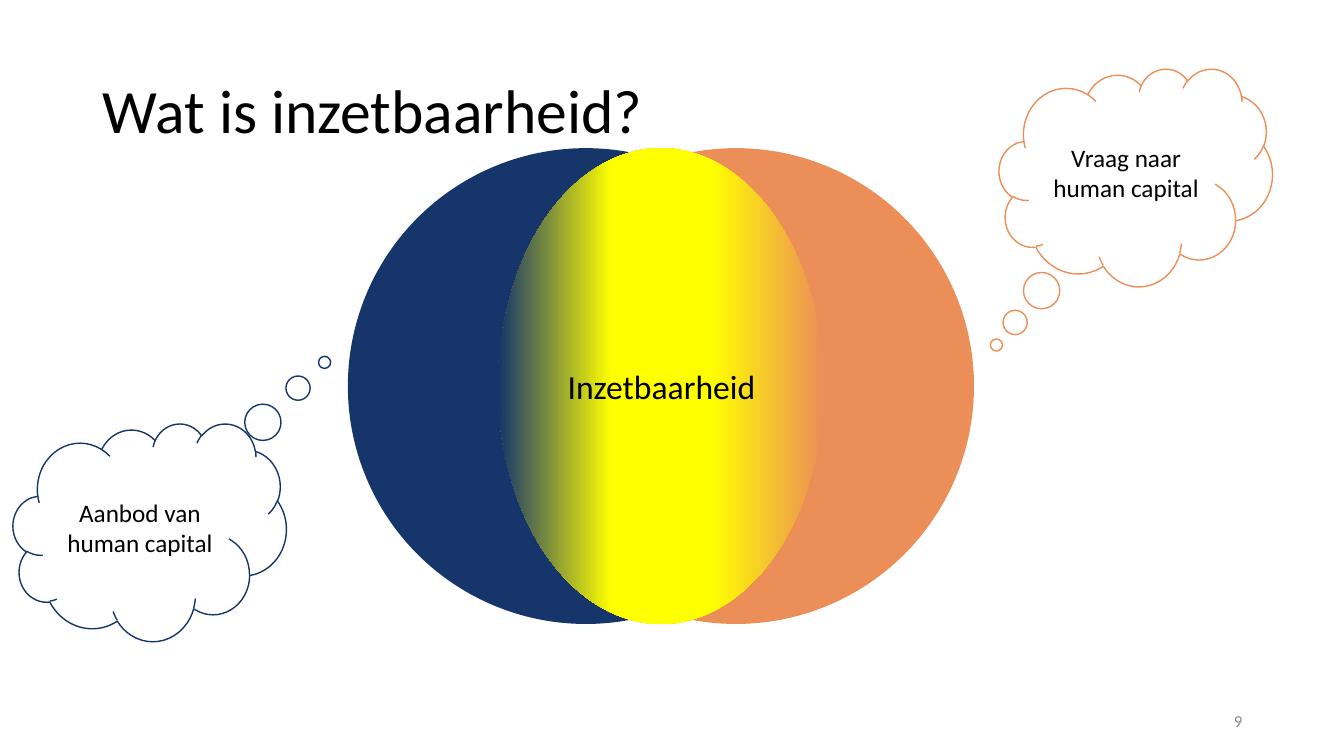
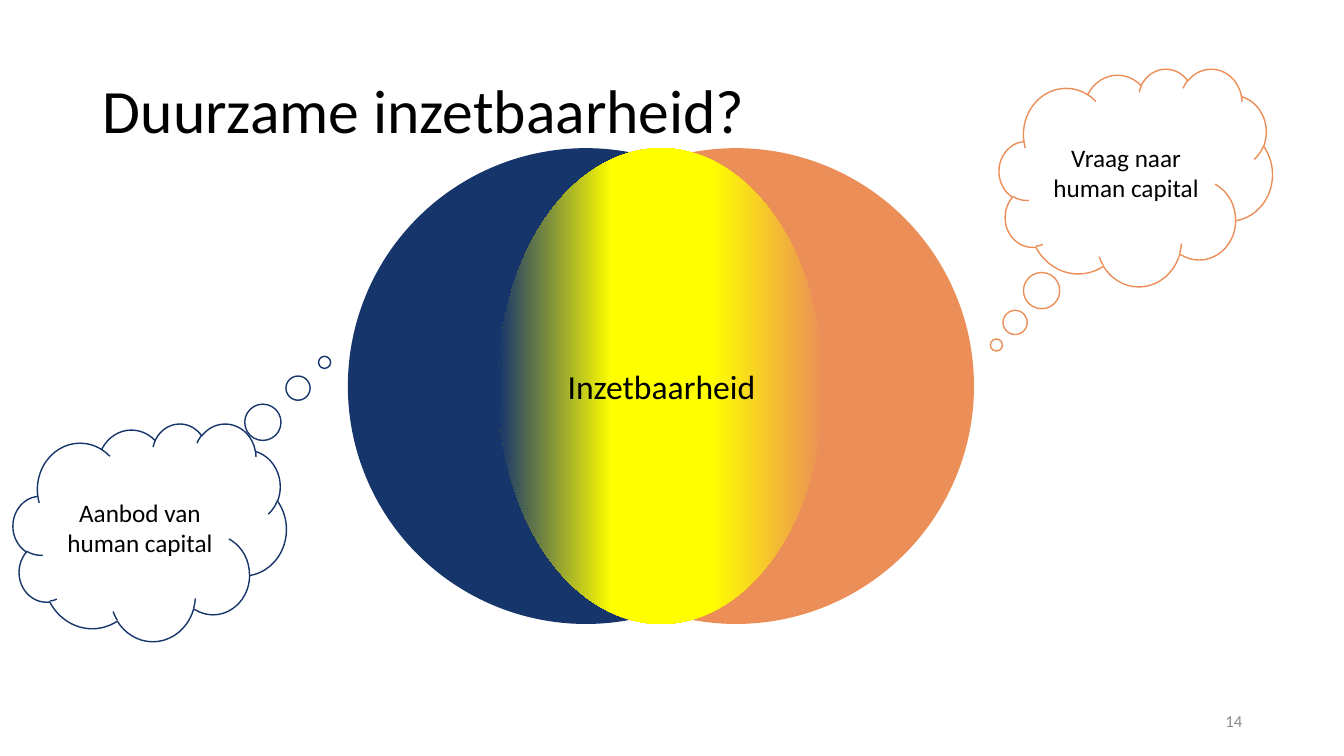
from lxml import etree
from pptx import Presentation
from pptx.dml.color import RGBColor
from pptx.enum.shapes import MSO_SHAPE
from pptx.enum.text import MSO_ANCHOR, MSO_AUTO_SIZE, PP_ALIGN
from pptx.oxml.ns import qn
from pptx.util import Pt

PX = 9144
FONT = "Calibri"
CLOUD, OVAL = MSO_SHAPE.CLOUD_CALLOUT, MSO_SHAPE.OVAL
MIDDLE, TOP = MSO_ANCHOR.MIDDLE, MSO_ANCHOR.TOP
LEFT, CENTER, RIGHT = PP_ALIGN.LEFT, PP_ALIGN.CENTER, PP_ALIGN.RIGHT
NONE, GROW = MSO_AUTO_SIZE.NONE, MSO_AUTO_SIZE.SHAPE_TO_FIT_TEXT
COLORS = {
    "navy": "16356B",
    "orange": "EC8E58",
    "yellow": "FFFF00",
    "black": "000000",
    "gray": "8C8C8C",
}
BLEND = [(0, "orange"), (35, "yellow"), (65, "yellow"), (100, "navy")]
CLOUDS = [
    ((991, 68, 271, 216), "Vraag naar human capital", "orange", (-0.51, 0.77)),
    ((13, 420, 271, 216), "Aanbod van human capital", "navy", (0.64, -0.78)),
]
SLIDES = [("Wat is inzetbaarheid?", "9"), ("Duurzame inzetbaarheid?", "14")]


def rgb(name):
    return RGBColor.from_string(COLORS[name])


def emu(box):
    return [n * PX for n in box]


def write(shape, text, size, align, color="black", anchor=MIDDLE, fit=NONE):
    frame = shape.text_frame
    frame.text = text
    frame.word_wrap = True
    frame.auto_size = fit
    frame.vertical_anchor = anchor
    para = frame.paragraphs[0]
    para.alignment = align
    para.font.name = FONT
    para.font.size = Pt(size)
    para.font.color.rgb = rgb(color)
    return para


def add_title(slide, box, text):
    title = slide.shapes.title
    title.left, title.top, title.width, title.height = emu(box)
    write(title, text, 44, LEFT).line_spacing = 0.9


def add_number(slide, box, text):
    write(slide.shapes.add_textbox(*emu(box)), text, 12, RIGHT, "gray")


def add_cloud(slide, box, text, color, tail):
    cloud = slide.shapes.add_shape(CLOUD, *emu(box))
    cloud.shadow.inherit = False
    cloud.fill.background()
    cloud.line.color.rgb = rgb(color)
    cloud.line.width = Pt(1)
    for i, value in enumerate(tail):
        cloud.adjustments[i] = value
    write(cloud, text, 18, CENTER)


def add_oval(group, box):
    oval = group.shapes.add_shape(OVAL, *emu(box))
    oval.shadow.inherit = False
    oval.line.fill.background()
    return oval


def blend(shape, stops):
    shape.fill.gradient()
    shape.fill.gradient_angle = 180
    holder = shape.element.spPr.find(qn("a:gradFill")).find(qn("a:gsLst"))
    for stop in list(holder):
        holder.remove(stop)
    for place, color in stops:
        stop = etree.SubElement(holder, qn("a:gs"), pos=str(place * 1000))
        etree.SubElement(stop, qn("a:srgbClr"), val=COLORS[color])


def add_venn(slide, box, text):
    x, y, wide, size = box
    shared = 2 * size - wide
    right = x + wide - size
    group = slide.shapes.add_group_shape()
    for left, color in ((x, "navy"), (right, "orange")):
        oval = add_oval(group, (left, y, size, size))
        oval.fill.solid()
        oval.fill.fore_color.rgb = rgb(color)
    blend(add_oval(group, (right, y, shared, size)), BLEND)
    label = group.shapes.add_textbox(*emu((right + 41, y + 211, 242, 50)))
    write(label, text, 24, CENTER, anchor=TOP, fit=GROW)


def add_slide(deck, title, number):
    slide = deck.slides.add_slide(deck.slide_layouts[5])
    add_number(slide, (942, 695, 300, 40), number)
    for cloud in CLOUDS:
        add_cloud(slide, *cloud)
    add_venn(slide, (345, 147, 621, 472), "Inzetbaarheid")
    add_title(slide, (92, 40, 1150, 145), title)


def main():
    deck = Presentation()
    deck.slide_width, deck.slide_height = emu((1333, 750))
    for title, number in SLIDES:
        add_slide(deck, title, number)
    deck.save("out.pptx")


if __name__ == "__main__":
    main()
